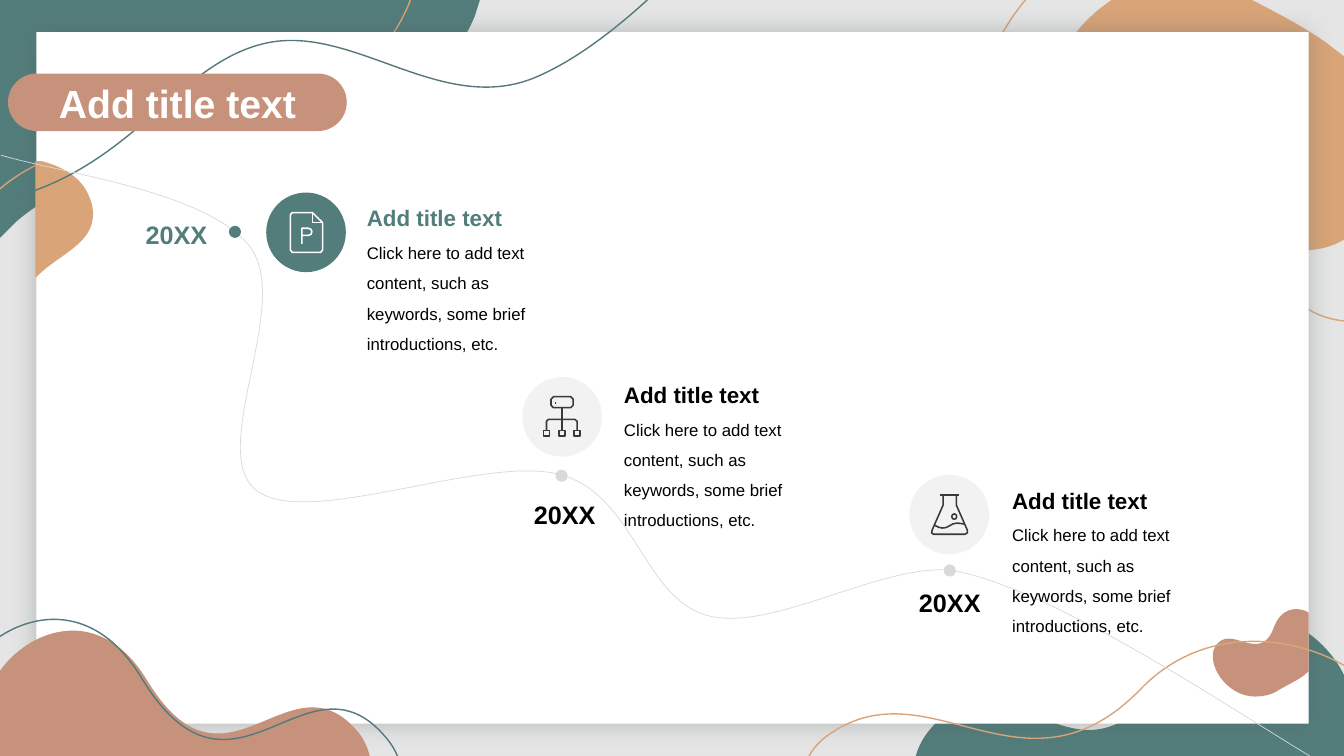
from lxml import etree
from pptx import Presentation
from pptx import util as u
from pptx.dml.color import RGBColor
from pptx.enum import shapes, text
from pptx.oxml.ns import qn

C = dict(teal="527D7B", tealLine="52797B", sand="D8A478", clay="C6927B", white="FFFFFF", black="000000",
         grey="808080", shade="566363", track="D9D9D9", disc="F2F2F2", ink="3B3838")

prs = Presentation()
prs.slide_width, prs.slide_height = u.Inches(13.33), u.Inches(7.5)
COLS, ROWS = 1333, 750  # every position below is a column or row of this grid
CW, RH = prs.slide_width / COLS, prs.slide_height / ROWS
s = prs.slides.add_slide(prs.slide_layouts[6])


def draw(outline, fill=None, line=None, width=1.0):
    """Draw a preset given as (kind, left, top, width, height),
    or a path string of M, L, C and Z commands."""
    if isinstance(outline, tuple):
        kind, x, y, w, h = outline
        sp = s.shapes.add_shape(kind, round(x * CW), round(y * RH), round(w * CW), round(h * RH))
    else:
        contours, nums, curves, segments, cmd = [], [], [], 0, ""
        for token in outline.split():
            if token == "Z":
                contours[-1]["close"] = True
            elif token in "MLC":
                cmd = token
                if cmd == "M":
                    contours.append({"pts": [], "close": False})
            else:
                nums.append(float(token) * (RH if len(nums) % 2 else CW))
                if len(nums) == (6 if cmd == "C" else 2):
                    if cmd == "C":
                        curves.append(segments)
                    if cmd != "M":
                        segments += len(nums) // 2
                    contours[-1]["pts"] += zip(nums[::2], nums[1::2])
                    nums = []
        fb = s.shapes.build_freeform(*contours[0]["pts"][0])
        for i, contour in enumerate(contours):
            if i:
                fb.move_to(*contour["pts"][0])
            fb.add_line_segments(contour["pts"][1:], close=contour["close"])
        sp = fb.convert_to_shape()
        # Join the three segments of each curve into one Bezier
        steps = list(sp._element.iter(qn("a:lnTo")))
        for i in curves:
            steps[i].tag = qn("a:cubicBezTo")
            for extra in steps[i + 1:i + 3]:
                steps[i].append(extra[0])
                extra.getparent().remove(extra)
    sp.shadow.inherit = False
    if fill:
        sp.fill.solid()
        sp.fill.fore_color.rgb = RGBColor.from_string(C[fill])
    else:
        sp.fill.background()
    if line:
        sp.line.color.rgb = RGBColor.from_string(C[line])
        sp.line.width = u.Pt(width)
    else:
        sp.line.fill.background()
    return sp


def write(words, x, y, w, h, size, color, bold=True, center=False, spacing=None):
    tf = s.shapes.add_textbox(round(x * CW), round(y * RH), round(w * CW), round(h * RH)).text_frame
    tf.word_wrap = True
    tf.auto_size = text.MSO_AUTO_SIZE.SHAPE_TO_FIT_TEXT if bold else text.MSO_AUTO_SIZE.NONE
    p = tf.paragraphs[0]
    p.alignment = text.PP_ALIGN.CENTER if center else text.PP_ALIGN.LEFT
    if spacing:
        p.line_spacing = spacing
    r = p.add_run()
    r.text = words
    r.font.name, r.font.size, r.font.bold = "Arial", u.Pt(size), bold
    r.font.color.rgb = RGBColor.from_string(C[color])


RECT, PILL, OVAL = (shapes.MSO_SHAPE.RECTANGLE, shapes.MSO_SHAPE.ROUNDED_RECTANGLE, shapes.MSO_SHAPE.OVAL)

# Backdrop and the decoration behind the sheet
backdrop = draw((RECT, 0, 0, COLS, ROWS), "grey")
etree.SubElement(backdrop._element.spPr.find(".//" + qn("a:srgbClr")), qn("a:alpha"), val="20000")
for outline, fill, line in [
    ("M 1334 751 C 1340 733 1343 714 1340 692 1331 629 1224 556 1159 665 1071 810 1000 631 923 723"
     " 916 731 911 740 908 751 Z", "teal", None),
    ("M 0 0 L 476 0 471 16 C 440 89 365 146 225 155 119 162 54 186 15 221 L 0 236 Z", "teal", None),
    ("M 1169 -21 C 1080 -19 1018 81 1047 130 1093 212 1184 68 1230 196 1249 249 1290 256 1325 242"
     " L 1333 238 1333 56 1315 42 C 1286 22 1255 7 1234 -4 1212 -16 1190 -21 1169 -21 Z", "sand", None),
    ("M 1161 -72 C 1031 -70 942 76 983 148 1051 267 1182 57 1249 242 1277 320 1336 330 1387 310"
     " L 1399 304 1399 39 1373 19 C 1331 -10 1285 -32 1256 -48 1222 -65 1190 -73 1161 -72 Z", None, "sand"),
    ("M -15 -11 L 411 -11 406 3 C 379 69 311 121 186 129 91 136 33 158 -2 189 L -15 203 Z", None, "sand"),
]:
    draw(outline, fill, line)

sheet = draw((RECT, 36, 32, 1262, 686), "white")
glow = etree.SubElement(sheet._element.spPr.find(qn("a:effectLst")), qn("a:outerShdw"),
                        blurRad=str(u.Pt(17)), dist="0", dir="0", algn="ctr", rotWithShape="0")
tint = etree.SubElement(glow, qn("a:srgbClr"), val=C["shade"])
etree.SubElement(tint, qn("a:alpha"), val="35000")

# Decoration in front of the sheet
for outline, fill, line in [
    ("M -8 751 C -15 735 -17 718 -14 699 -7 643 88 579 146 675 224 804 287 645 355 726"
     " 361 733 365 742 367 751 Z", "clay", None),
    ("M 92 217 C 89 244 54 255 35 276 L 35 160 42 160 C 64 166 81 177 88 194 92 203 93 210 92 217 Z",
     "sand", None),
    ("M -41 761 C -48 743 -51 722 -48 700 -39 635 72 560 140 672 231 823 304 637 383 732"
     " 390 740 395 750 398 761 Z", None, "tealLine"),
    ("M -479 232 C -297 230 -114 228 9 197 133 165 176 63 263 43 351 23 439 117 533 76"
     " 627 35 728 -85 828 -205", None, "tealLine"),
    ("M 1245 691 C 1216 691 1196 658 1205 642 1220 616 1250 662 1264 621 1271 604 1284 602 1295 606"
     " L 1298 608 1298 666 1292 671 C 1283 677 1272 682 1266 686 1259 690 1251 691 1245 691 Z", "clay", None),
    ("M 1365 755 C 1374 740 1378 724 1374 705 1362 653 1220 592 1132 683 1015 804 921 655 819 731"
     " 810 738 804 746 800 755 Z", None, "sand"),
]:
    draw(outline, fill, line)

# Heading
pill = draw((PILL, 8, 73, 336, 57), "clay")
pill.adjustments[0] = 0.5
write("Add title text", 37, 74, 278, 57, 28, "white", center=True)

# Winding road
draw("M 1 154 C 66 173 206 190 248 245 291 301 204 450 255 487 306 525 481 450 556 471"
     " 630 491 638 595 703 611 768 627 875 558 945 566 1044 584 1216 700 1299 750", None, "track", 0.5)

file_icon = ("M 310 211 L 290 211 288 213 288 248 290 250.5 318 250.5 320 248 320 221 Z"
             " M 310 211 L 310 221 320 221"
             " M 299.5 242 L 299.5 226.5 306 226.5 C 310.5 226.5 310.5 233.5 306 233.5 L 299.5 233.5")
network_icon = ("M 549 393.5 L 566 393.5 568.5 396 568.5 402 566 404.5 549 404.5 546.5 402 546.5 396 Z"
                " M 550 400 L 551 400 M 557.5 404.5 L 557.5 427"
                " M 542 427 L 542 418 544 416 570 416 572.5 418 572.5 427")
for x in (539, 554.5, 569.5):
    network_icon += f" M {x} 427 L {x + 6} 427 {x + 6} 432.5 {x} 432.5 Z"
flask_icon = ("M 932 491 L 951 491 M 935.5 491 L 935.5 501 924.5 526 C 923.5 528 924 530 926 530"
              " L 957 530 C 959 530 960.5 528 959.5 526 L 948.5 501 948.5 491"
              " M 927 521 C 932 524.5 937.5 525 942 521.5 946 518.5 951 518.5 956 520"
              " M 944 512.5 C 944 509 949 509 949 512.5 949 516 944 516 944 512.5 Z")

# Milestones: corners of dot, disc, year and text, then icon and colours
for dot, disc, year, words, icon, dot_fill, disc_fill, stroke, accent in [
    ((227, 224), (264, 191), (128, 213), (354, 198), file_icon, "teal", "teal", "white", "teal"),
    ((551, 466), (518, 374), (513, 490), (609, 373), network_icon, "track", "disc", "ink", "black"),
    ((936, 560), (902, 471), (895, 578), (994, 478), flask_icon, "track", "disc", "ink", "black"),
]:
    draw((OVAL, *dot, 12, 12), dot_fill)
    write("Add title text", *words, 219, 37, 16, accent)
    write("Click here to add text content, such as keywords, some brief introductions, etc.",
          words[0], words[1] + 28, 219, 55, 12, "black", bold=False, spacing=1.5)
    draw((OVAL, *disc, 79, 79), disc_fill)
    draw(icon, None, stroke, 1.1)
    write("20XX", *year, 94, 40, 18, accent, center=True)

prs.save("out.pptx")
